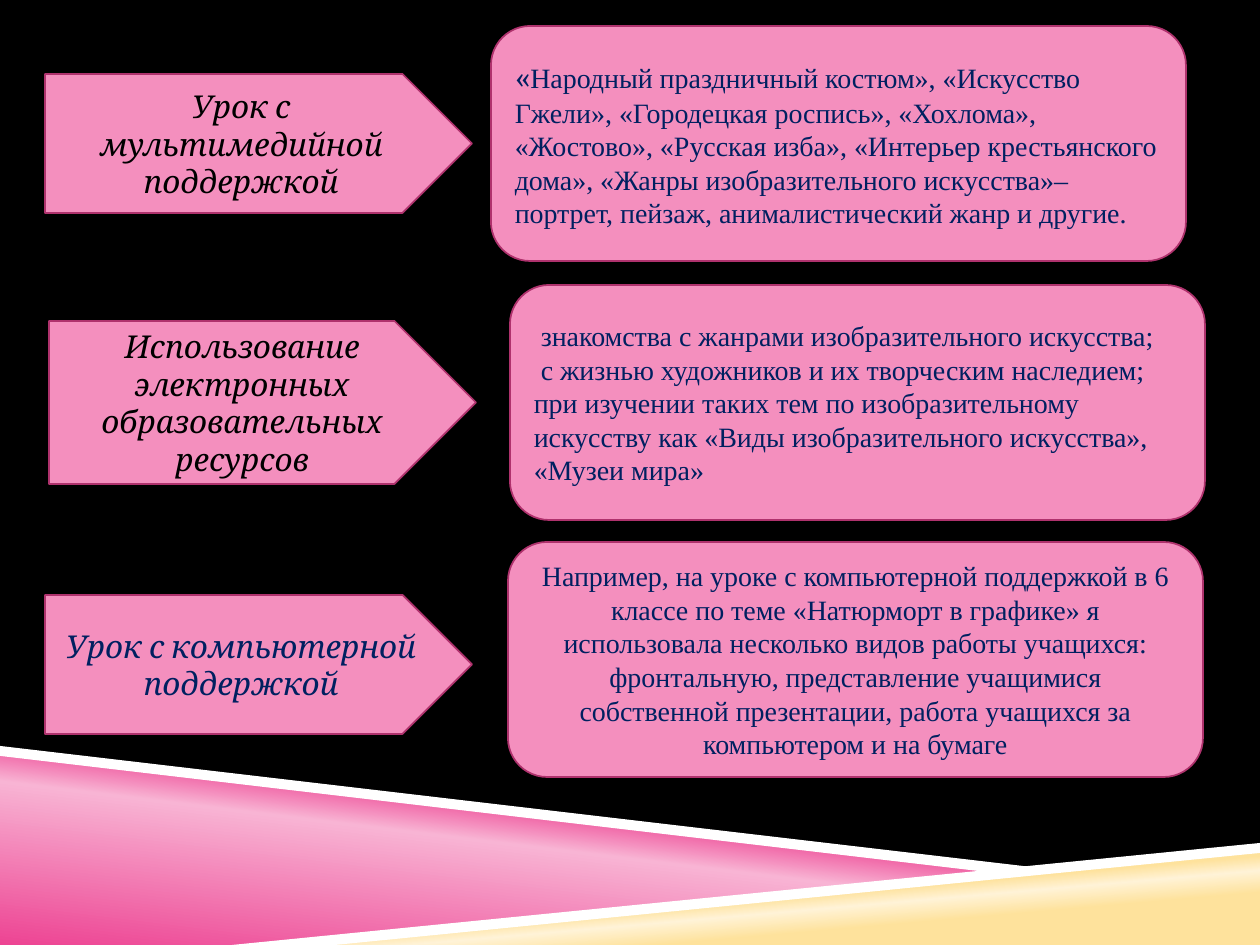
from copy import deepcopy
from dataclasses import dataclass

from pptx import Presentation
from pptx.dml.color import RGBColor
from pptx.enum.shapes import MSO_SHAPE
from pptx.enum.text import MSO_ANCHOR, PP_ALIGN
from pptx.oxml.ns import qn
from pptx.shapes.autoshape import Shape
from pptx.slide import Slide
from pptx.util import Pt

PX = 914400 / 126
ARROW = MSO_SHAPE.PENTAGON
CARD = MSO_SHAPE.ROUNDED_RECTANGLE
MIDDLE = MSO_ANCHOR.MIDDLE
LEFT = PP_ALIGN.LEFT
CENTER = PP_ALIGN.CENTER


@dataclass(frozen=True)
class Theme:
    background: str = "000000"
    band: str = "FFFFFF"
    panel: str = "F48FBE"
    border: str = "AF326D"
    black: str = "000000"
    navy: str = "002060"
    pink: str = "ED4493"
    pale_pink: str = "F8B4D4"
    yellow: str = "FEE29C"
    pale_yellow: str = "FFF3D7"
    heading_font: str = "Cambria"
    body_font: str = "Times New Roman"
    heading_size: int = 18
    body_size: int = 16
    border_width: int = 1


THEME = Theme()


@dataclass(frozen=True)
class Span:
    text: str
    color: str = THEME.navy
    font: str = THEME.body_font
    size: int = THEME.body_size
    italic: bool = False


@dataclass(frozen=True)
class Panel:
    kind: int
    left: int
    top: int
    width: int
    height: int
    align: int
    paragraphs: tuple[tuple[Span, ...], ...]


@dataclass(frozen=True)
class Gradient:
    angle: int
    stops: tuple[tuple[float, str], ...]


@dataclass(frozen=True)
class Ribbon:
    points: tuple[tuple[int, int], ...]
    fill: str | Gradient


def px(value: int) -> int:
    return round(value * PX)


def rgb(color: str) -> RGBColor:
    return RGBColor.from_string(color)


def heading(text: str, color: str) -> Span:
    return Span(text, color, THEME.heading_font, THEME.heading_size, True)


def arrow(left: int, top: int, height: int, text: str, color: str = THEME.black) -> Panel:
    return Panel(ARROW, left, top, 427, height, CENTER, ((heading(text, color),),))


def card(left: int, top: int, align: int, *paragraphs: tuple[Span, ...]) -> Panel:
    return Panel(CARD, left, top, 695, 235, align, paragraphs)


RIBBONS = (
    Ribbon(((0, 752), (998, 872), (252, 945), (0, 945)),
           Gradient(83, ((0, THEME.pink), (0.52, THEME.pale_pink), (0.66, THEME.pink)))),
    Ribbon(((249, 945), (1260, 847), (1260, 945)),
           Gradient(95, ((0.28, THEME.yellow), (0.4, THEME.pale_yellow), (0.48, THEME.yellow)))),
    Ribbon(((0, 746), (0, 756), (995, 873), (1048, 869)), THEME.band),
    Ribbon(((1260, 843), (232, 945), (335, 945), (1260, 853)), THEME.band),
)

PANELS = (
    arrow(45, 74, 139, "Урок с мультимедийной поддержкой"),
    card(491, 26, LEFT, (
        Span("«", font=THEME.heading_font, size=THEME.heading_size),
        Span("Народный праздничный костюм», «Искусство Гжели», «Городецкая роспись», "
             "«Хохлома», «Жостово», «Русская изба», «Интерьер крестьянского дома», "
             "«Жанры изобразительного искусства»– портрет, пейзаж, анималистический "
             "жанр и другие."),
    )),
    arrow(45, 595, 139, "Урок с компьютерной поддержкой", THEME.navy),
    arrow(49, 321, 163, "Использование электронных образовательных ресурсов"),
    card(510, 285, LEFT,
         (Span(" знакомства с жанрами изобразительного искусства;"),),
         (Span(" с жизнью художников и их творческим наследием;"),),
         (Span("при изучении таких тем по изобразительному искусству как "
               "«Виды изобразительного искусства», «Музеи мира»"),)),
    card(508, 542, CENTER, (
        Span("Например, на уроке с компьютерной поддержкой в 6 классе по теме "
             "«Натюрморт в графике» я использовала несколько видов работы учащихся: "
             "фронтальную, представление учащимися собственной презентации, работа "
             "учащихся за компьютером и на бумаге"),
    )),
)


def paint_gradient(shape: Shape, gradient: Gradient) -> None:
    shape.fill.gradient()
    shape.fill.gradient_angle = gradient.angle
    stop_list = next(shape.element.spPr.iter(qn("a:gsLst")))
    while len(stop_list) < len(gradient.stops):
        stop_list.append(deepcopy(stop_list[-1]))
    for stop, (position, color) in zip(shape.fill.gradient_stops, gradient.stops):
        stop.position = position
        stop.color.rgb = rgb(color)


def paint_solid(shape: Shape, color: str) -> None:
    shape.fill.solid()
    shape.fill.fore_color.rgb = rgb(color)


def draw_ribbon(page: Slide, ribbon: Ribbon) -> None:
    start, *rest = ribbon.points
    builder = page.shapes.build_freeform(*start, scale=PX)
    builder.add_line_segments(rest, close=True)
    shape = builder.convert_to_shape()
    shape.shadow.inherit = False
    shape.line.fill.background()
    if isinstance(ribbon.fill, Gradient):
        paint_gradient(shape, ribbon.fill)
    else:
        paint_solid(shape, ribbon.fill)


def draw_panel(page: Slide, panel: Panel) -> None:
    bounds = map(px, (panel.left, panel.top, panel.width, panel.height))
    box = page.shapes.add_shape(panel.kind, *bounds)
    box.shadow.inherit = False
    paint_solid(box, THEME.panel)
    box.line.color.rgb = rgb(THEME.border)
    box.line.width = Pt(THEME.border_width)
    frame = box.text_frame
    for name, value in {"word_wrap": True, "vertical_anchor": MIDDLE}.items():
        setattr(frame, name, value)
    for index, spans in enumerate(panel.paragraphs):
        paragraph = frame.add_paragraph() if index else frame.paragraphs[0]
        paragraph.alignment = panel.align
        for span in spans:
            run = paragraph.add_run()
            run.text = span.text
            formats = {"name": span.font, "size": Pt(span.size), "italic": span.italic}
            for name, value in formats.items():
                setattr(run.font, name, value)
            run.font.color.rgb = rgb(span.color)


def main() -> None:
    deck = Presentation()
    deck.slide_width, deck.slide_height = px(1260), px(945)
    page = deck.slides.add_slide(deck.slide_layouts[6])
    page.background.fill.solid()
    page.background.fill.fore_color.rgb = rgb(THEME.background)
    for ribbon in RIBBONS:
        draw_ribbon(page, ribbon)
    for panel in PANELS:
        draw_panel(page, panel)
    deck.save("out.pptx")


if __name__ == "__main__":
    main()
